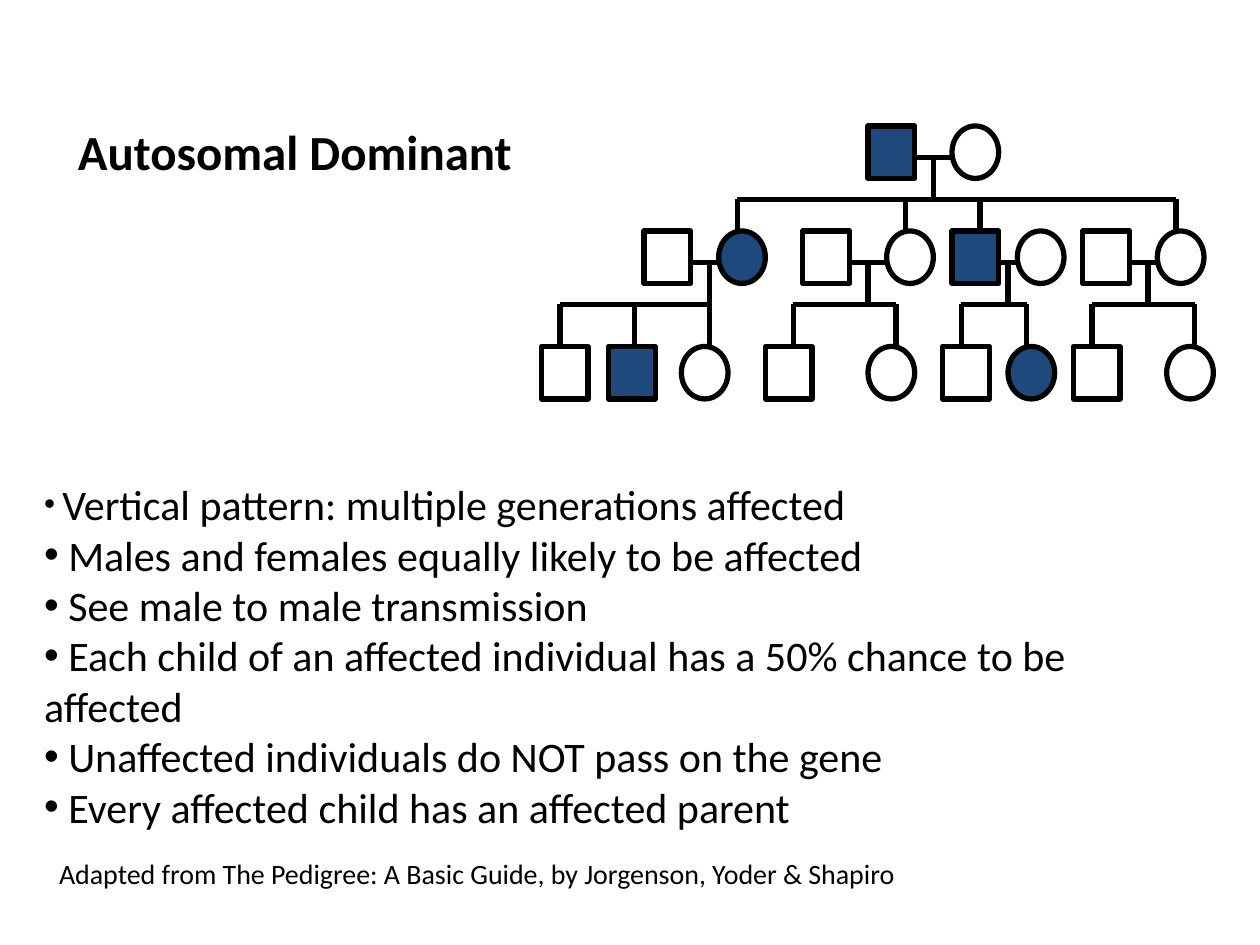
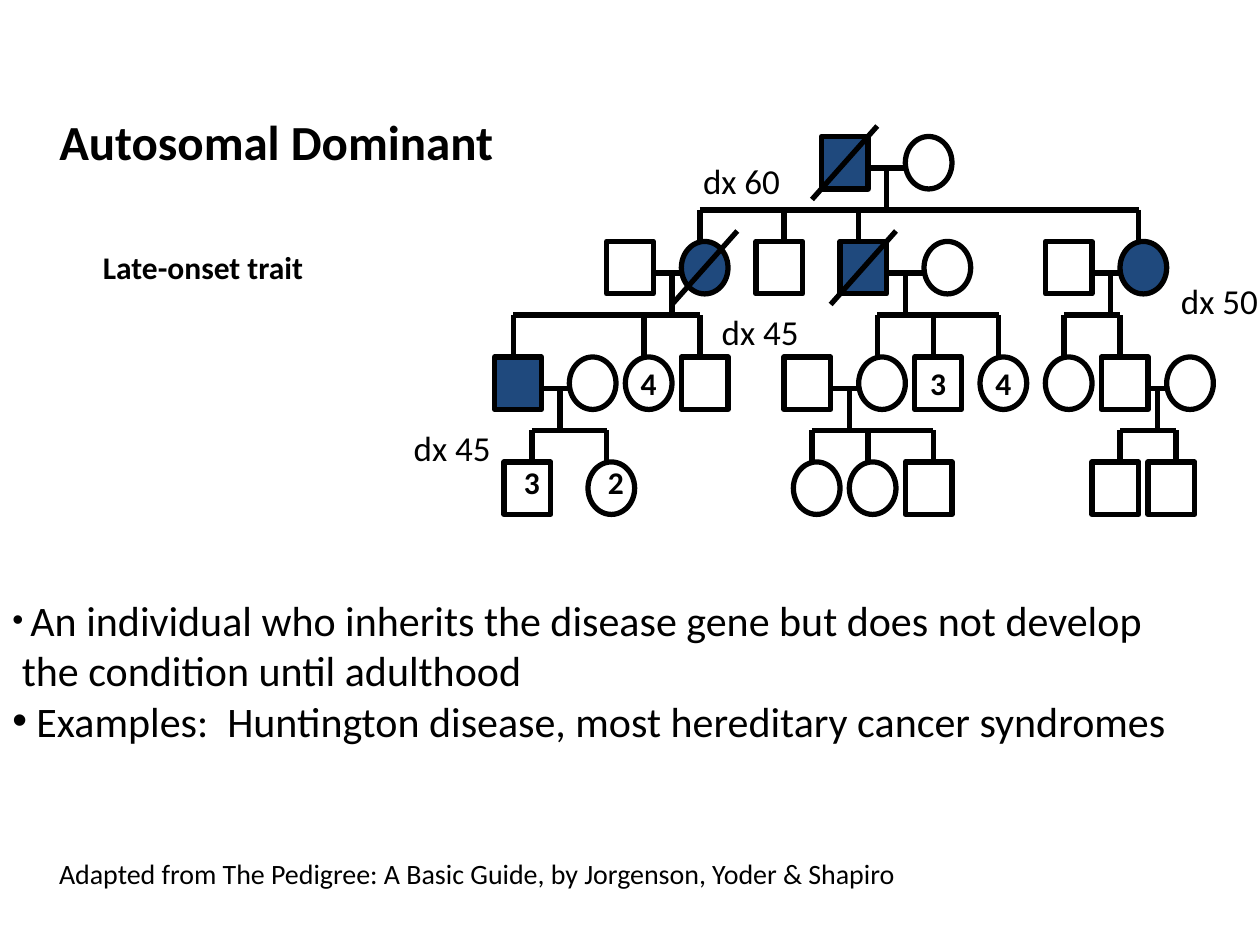
from lxml.etree import SubElement
from pptx import Presentation
from pptx.dml.color import RGBColor
from pptx.enum.shapes import MSO_CONNECTOR, MSO_SHAPE
from pptx.enum.text import MSO_ANCHOR, MSO_AUTO_SIZE, PP_ALIGN
from pptx.oxml.ns import qn
from pptx.util import Inches, Pt

WIDTH, HEIGHT = 10, 7.5
COLUMNS, ROWS = 135, 90
PERSON = 5
MARRIAGE_DROP = 3
SIBLING_DROP = 7
FONT = "Calibri"
BLACK, WHITE, AFFECTED = "000000", "FFFFFF", "1F497D"
SOURCE = "Adapted from The Pedigree: A Basic Guide, by Jorgenson, Yoder & Shapiro"
SYMBOLS = {"male": MSO_SHAPE.RECTANGLE, "female": MSO_SHAPE.OVAL}


def color(value):
    return RGBColor.from_string(value)


def across(columns):
    return Inches(WIDTH * columns / COLUMNS)


def down(rows):
    return Inches(HEIGHT * rows / ROWS)


def box(column, row, columns, rows):
    return across(column), down(row), across(columns), down(rows)


def write(paragraph, text, size=24, bold=False):
    run = paragraph.add_run()
    run.text = text
    run.font.name = FONT
    run.font.size = Pt(size)
    run.font.bold = bold
    run.font.color.rgb = color(BLACK)


def add_title(slide, text, column, row):
    title = slide.shapes.title
    title.left, title.top, title.width, title.height = box(column, row, 56, 6.8)
    frame = title.text_frame
    frame.word_wrap = False
    frame.auto_size = MSO_AUTO_SIZE.NONE
    frame.vertical_anchor = MSO_ANCHOR.TOP
    frame.paragraphs[0].alignment = PP_ALIGN.LEFT
    write(frame.paragraphs[0], text, size=28, bold=True)


def add_caption(slide, text, column, row, columns=12, rows=5.3, **text_format):
    caption = slide.shapes.add_textbox(*box(column, row, columns, rows))
    frame = caption.text_frame
    frame.word_wrap = False
    frame.auto_size = MSO_AUTO_SIZE.SHAPE_TO_FIT_TEXT
    write(frame.paragraphs[0], text, **text_format)


def add_bullets(slide, lines, column, row, columns, rows):
    frame = slide.shapes.add_textbox(*box(column, row, columns, rows)).text_frame
    frame.word_wrap = True
    for index, (text, bulleted) in enumerate(lines):
        paragraph = frame.add_paragraph() if index else frame.paragraphs[0]
        if bulleted:
            properties = paragraph._p.get_or_add_pPr()
            SubElement(properties, qn("a:buFont"), typeface="Arial")
            SubElement(properties, qn("a:buChar"), char="•")
        write(paragraph, " ", size=24 if index else 18)
        write(paragraph, text)


def add_line(slide, start, end):
    line = slide.shapes.add_connector(
        MSO_CONNECTOR.STRAIGHT,
        across(start[0]), down(start[1]), across(end[0]), down(end[1]))
    line.line.color.rgb = color(BLACK)
    line.line.width = Pt(3)
    SubElement(line._element.spPr, qn("a:effectLst"))


def add_person(slide, row, column, sex, affected=False, deceased=False, count=""):
    person = slide.shapes.add_shape(SYMBOLS[sex], *box(column, row, PERSON, PERSON))
    person.shadow.inherit = False
    person.fill.solid()
    person.fill.fore_color.rgb = color(AFFECTED if affected else WHITE)
    person.line.color.rgb = color(BLACK)
    person.line.width = Pt(3)
    if count:
        frame = person.text_frame
        frame.word_wrap = False
        frame.vertical_anchor = MSO_ANCHOR.MIDDLE
        frame.paragraphs[0].alignment = PP_ALIGN.CENTER
        write(frame.paragraphs[0], count, size=18, bold=True)
    if deceased:
        add_line(slide, (column - 1, row + PERSON + 1), (column + PERSON + 1, row - 1))


def add_family(slide, row, child_row, left, right, descent, children):
    marriage, siblings = row + MARRIAGE_DROP, row + SIBLING_DROP
    add_line(slide, (left + PERSON, marriage), (right, marriage))
    add_line(slide, (descent, marriage), (descent, siblings))
    add_line(slide, (min(children), siblings), (max(children), siblings))
    for child in children:
        add_line(slide, (child, siblings), (child, child_row))


def add_pedigree(slide, rows, families, generations):
    for row, child_row, couples in zip(rows, rows[1:], families):
        for couple in couples:
            add_family(slide, row, child_row, *couple)
    for row, people in zip(rows, generations):
        for column, sex, *details in people:
            add_person(slide, row, column, sex, **dict.fromkeys(
                [detail for detail in details if detail.isalpha()], True),
                count="".join(detail for detail in details if detail.isdigit()))


def add_slide(presentation, title_column, title_row):
    slide = presentation.slides.add_slide(presentation.slide_layouts[5])
    add_title(slide, "Autosomal Dominant", title_column, title_row)
    add_caption(slide, SOURCE, 5, 81, columns=104, rows=4.4, size=16)
    return slide


def add_dominant_slide(presentation):
    slide = add_slide(presentation, 7, 11)
    families = [
        [(93, 102, 100, (79, 97, 105, 126))],
        [(69, 77, 76, (60, 68, 76)), (86, 95, 93, (85, 96)),
         (102, 109, 108, (103, 110)), (116, 124, 123, (117, 128))],
    ]
    generations = [
        [(93, "male", "affected"), (102, "female")],
        [(69, "male"), (77, "female", "affected"), (86, "male"), (95, "female"),
         (102, "male", "affected"), (109, "female"), (116, "male"), (124, "female")],
        [(58, "male"), (65.2, "male", "affected"), (73, "female"), (82, "male"),
         (93, "female"), (101, "male"), (108, "female", "affected"),
         (115, "male"), (125, "female")],
    ]
    add_pedigree(slide, (12, 22, 33), families, generations)
    facts = [
        "Vertical pattern: multiple generations affected",
        "Males and females equally likely to be affected",
        "See male to male transmission",
        "Each child of an affected individual has a 50% chance to be affected",
        "Unaffected individuals do NOT pass on the gene",
        "Every affected child has an affected parent",
    ]
    add_bullets(slide, [(fact, True) for fact in facts], 3.4, 45, 126, 35.2)


def add_late_onset_slide(presentation):
    slide = add_slide(presentation, 5, 10)
    add_caption(slide, "Late-onset trait", 9.7, 23, columns=26, size=18, bold=True)
    families = [
        [(88, 97, 95, (75, 84, 92, 122))],
        [(65, 73, 72, (55, 69, 75)), (90, 99, 97, (94, 100, 107)),
         (112, 120, 119, (114, 120))],
        [(53, 61, 60, (57, 65)), (84, 92, 91, (87, 93, 100)),
         (118, 125, 124, (120, 126))],
    ]
    generations = [
        [(88, "male", "affected", "deceased"), (97, "female")],
        [(65, "male"), (73, "female", "affected", "deceased"), (81, "male"),
         (90, "male", "affected", "deceased"), (99, "female"), (112, "male"),
         (120, "female", "affected")],
        [(53, "male", "affected"), (61, "female"), (67, "female", "4"), (73, "male"),
         (84, "male"), (92, "female"), (98, "male", "3"), (105, "female", "4"),
         (112, "female"), (118, "male"), (125, "female")],
        [(54, "male"), (63, "female"), (85, "female"), (91, "female"),
         (97, "male"), (117, "male"), (123, "male")],
    ]
    add_pedigree(slide, (13, 23, 34, 44), families, generations)
    for count, column in (("3", 54.8), ("2", 63.8)):
        add_caption(slide, count, column, 43.5, columns=4.6, rows=4.8, size=18, bold=True)
    diagnoses = [("dx 60", 74, 14.6), ("dx 45", 76, 29),
                 ("dx 45", 43, 40), ("dx 50", 125.2, 26)]
    for diagnosis in diagnoses:
        add_caption(slide, *diagnosis, size=20)
    add_bullets(slide, [
        ("An individual who inherits the disease gene but does not develop", True),
        ("the condition until adulthood", False),
        ("Examples:  Huntington disease, most hereditary cancer syndromes", True),
    ], 0, 56, 135, 15.7)


def main():
    presentation = Presentation()
    presentation.slide_width, presentation.slide_height = Inches(WIDTH), Inches(HEIGHT)
    add_dominant_slide(presentation)
    add_late_onset_slide(presentation)
    presentation.save("out.pptx")


if __name__ == "__main__":
    main()
